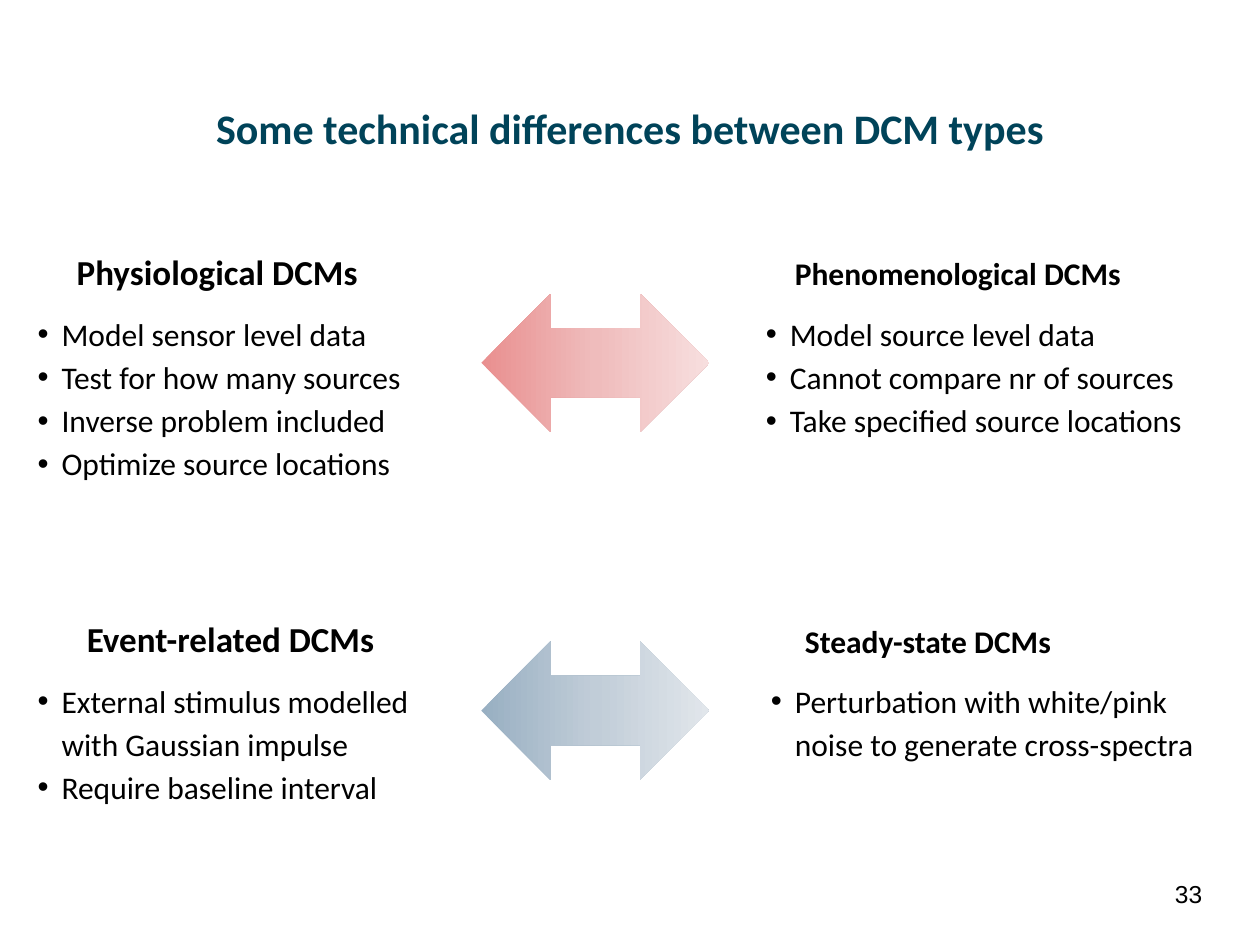
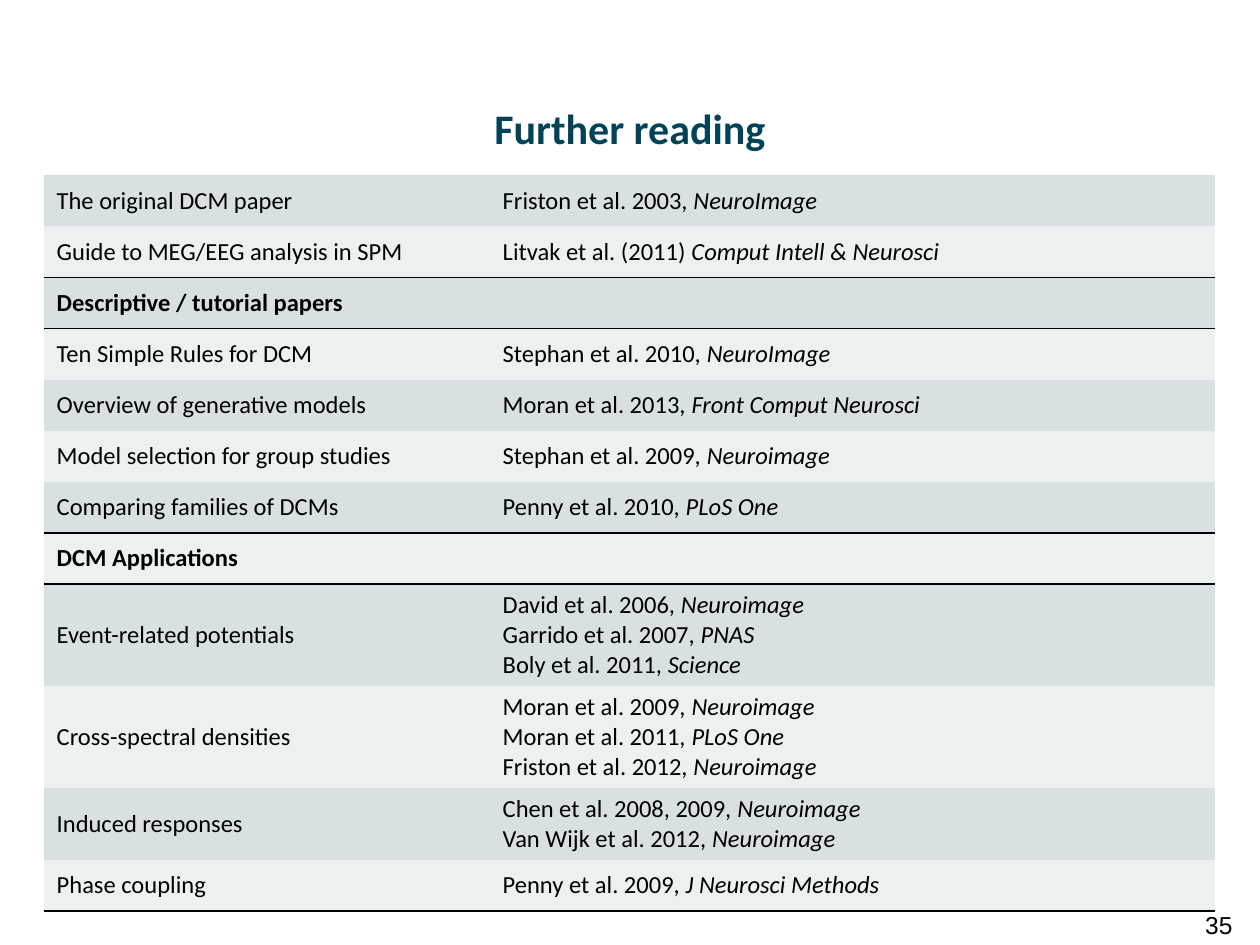
from copy import deepcopy
from dataclasses import dataclass
from typing import Any

from lxml.etree import SubElement
from pptx import Presentation
from pptx.dml.color import RGBColor
from pptx.enum.shapes import MSO_SHAPE as Preset
from pptx.enum.text import MSO_ANCHOR as Anchor, MSO_AUTO_SIZE as AutoSize, PP_ALIGN as Align
from pptx.oxml import parse_xml
from pptx.oxml.ns import nsdecls, qn
from pptx.util import Inches, Pt

BLACK = "000000"
TITLE_COLOUR = "004359"
BANDS = ("D8E0E3", "ECF0F1")
PLAIN_TABLE_STYLE = "{2D5ABB26-0587-4C30-8999-92F81FD0307C}"
BULLET_INDENT = Inches(0.19)
TABLE_HEIGHT = 5.84
TITLE_FORMAT = {"name": "Calibri", "size": Pt(24), "bold": True}
BODY_FORMAT = {"name": "Calibri", "size": Pt(18)}
ENTRY_FORMAT = {"name": "Calibri", "size": Pt(14), "bold": False}
NUMBER_FORMAT = {"name": "Arial", "size": Pt(14)}


@dataclass(frozen=True)
class Box:
    """A place on the slide, in inches."""
    left: float
    top: float
    width: float
    height: float

    def emu(self) -> tuple:
        """Return the four lengths for python-pptx."""
        return tuple(Inches(v) for v in (self.left, self.top, self.width, self.height))


@dataclass(frozen=True)
class DcmType:
    """One kind of DCM with its heading and properties."""
    heading: str
    heading_box: Box
    heading_size: int
    points: tuple[str, ...]
    points_box: Box


@dataclass(frozen=True)
class Contrast:
    """An arrow between two kinds of DCM."""
    arrow_box: Box
    gradient: tuple[str, str, str]
    sides: tuple[DcmType, DcmType]


@dataclass(frozen=True)
class Reading:
    """A table row: a topic with references, or a section heading without."""
    topic: str
    references: tuple[tuple[str, str], ...] = ()


CONTRASTS = (
    Contrast(Box(3.82, 2.33, 1.81, 1.1), ("E98F8F", "EFBCBC", "F7DEDE"), (
        DcmType("Physiological DCMs", Box(0.51, 1.94, 2.52, 0.44), 20,
                ("Model sensor level data", "Test for how many sources",
                 "Inverse problem included", "Optimize source locations"),
                Box(0.2, 2.41, 3.62, 1.78)),
        DcmType("Phenomenological DCMs", Box(6.21, 1.97, 2.81, 0.4), 18,
                ("Model source level data", "Cannot compare nr of sources",
                 "Take specified source locations"),
                Box(5.98, 2.41, 3.98, 1.48)))),
    Contrast(Box(3.82, 5.09, 1.81, 1.1), ("98AFC2", "C1CDD8", "E1E6EB"), (
        DcmType("Event-related DCMs", Box(0.59, 4.85, 2.52, 0.44), 20,
                ("External stimulus modelled with Gaussian impulse",
                 "Require baseline interval"),
                Box(0.2, 5.32, 3.62, 1.44)),
        DcmType("Steady-state DCMs", Box(6.29, 4.89, 2.18, 0.4), 18,
                ("Perturbation with white/pink noise to generate cross-spectra",),
                Box(6.02, 5.32, 3.78, 0.79)))),
)

READINGS = (
    Reading("The original DCM paper", (("Friston et al. 2003, ", "NeuroImage"),)),
    Reading("Guide to MEG/EEG analysis in SPM",
            (("Litvak et al. (2011) ", "Comput Intell & Neurosci"),)),
    Reading("Descriptive / tutorial papers"),
    Reading("Ten Simple Rules for DCM", (("Stephan et al. 2010, ", "NeuroImage"),)),
    Reading("Overview of generative models",
            (("Moran et al. 2013, ", "Front Comput Neurosci"),)),
    Reading("Model selection for group studies", (("Stephan et al. 2009, ", "Neuroimage"),)),
    Reading("Comparing families of DCMs", (("Penny et al. 2010, ", "PLoS One"),)),
    Reading("DCM Applications"),
    Reading("Event-related potentials",
            (("David et al. 2006, ", "Neuroimage"), ("Garrido et al. 2007, ", "PNAS"),
             ("Boly et al. 2011, ", "Science"))),
    Reading("Cross-spectral densities",
            (("Moran et al. 2009, ", "Neuroimage"), ("Moran et al. 2011, ", "PLoS One"),
             ("Friston et al. 2012, ", "Neuroimage"))),
    Reading("Induced responses",
            (("Chen et al. 2008, 2009, ", "Neuroimage"),
             ("Van Wijk et al. 2012, ", "Neuroimage"))),
    Reading("Phase coupling", (("Penny et al. 2009, ", "J Neurosci Methods"),)),
)


def paint(colour_format: Any, colour: str) -> None:
    """Set a colour from a hex string."""
    colour_format.rgb = RGBColor.from_string(colour)


def apply(target: Any, values: dict) -> None:
    """Set each named attribute of the target."""
    for name, value in values.items():
        setattr(target, name, value)


def add_run(paragraph: Any, words: str, values: dict, colour: str = BLACK) -> None:
    """Append formatted words to a paragraph."""
    run = paragraph.add_run()
    run.text = words
    apply(run.font, values)
    paint(run.font.color, colour)


def next_paragraph(frame: Any, index: int) -> Any:
    """Return the first paragraph, or a new one after it."""
    return frame.add_paragraph() if index else frame.paragraphs[0]


def add_frame(slide: Any, box: Box) -> Any:
    """Add a wrapping text box and return its frame."""
    frame = slide.shapes.add_textbox(*box.emu()).text_frame
    frame.word_wrap = True
    return frame


def add_titled_slide(deck: Any, heading: str, number: str, number_box: Box) -> Any:
    """Add a title-only slide with its title and page number."""
    slide = deck.slides.add_slide(deck.slide_layouts[5])
    title = slide.shapes.title
    apply(title, dict(zip(("left", "top", "width", "height"),
                          Box(0.36, 0.76, 9.28, 1.42).emu())))
    apply(title.text_frame, {"vertical_anchor": Anchor.TOP, "auto_size": AutoSize.NONE})
    paragraph = title.text_frame.paragraphs[0]
    paragraph.alignment = Align.CENTER
    add_run(paragraph, heading, TITLE_FORMAT, TITLE_COLOUR)
    page = add_frame(slide, number_box).paragraphs[0]
    page.alignment = Align.RIGHT
    add_run(page, number, NUMBER_FORMAT)
    return slide


def add_dcm_type(slide: Any, dcm: DcmType) -> None:
    """Draw a heading and its bulleted properties."""
    heading = add_frame(slide, dcm.heading_box).paragraphs[0]
    add_run(heading, dcm.heading, BODY_FORMAT | {"size": Pt(dcm.heading_size), "bold": True})
    frame = add_frame(slide, dcm.points_box)
    for index, point in enumerate(dcm.points):
        paragraph = next_paragraph(frame, index)
        properties = paragraph._p.get_or_add_pPr()
        properties.set("marL", str(BULLET_INDENT))
        properties.set("indent", str(-BULLET_INDENT))
        SubElement(properties, qn("a:buFont"), typeface="Arial")
        SubElement(properties, qn("a:buChar"), char="•")
        paragraph.line_spacing = 1.14
        add_run(paragraph, point, BODY_FORMAT)


def add_arrow(slide: Any, contrast: Contrast) -> None:
    """Draw a two-headed arrow with a three-stop gradient."""
    arrow = slide.shapes.add_shape(Preset.LEFT_RIGHT_ARROW, *contrast.arrow_box.emu())
    arrow.shadow.inherit = False
    arrow.line.fill.background()
    arrow.fill.gradient()
    arrow.fill.gradient_angle = 0
    stops = arrow._element.spPr.find(qn("a:gradFill")).find(qn("a:gsLst"))
    stops.append(deepcopy(stops[0]))
    for stop, colour, position in zip(arrow.fill.gradient_stops, contrast.gradient, (0, 0.5, 1)):
        stop.position = position
        paint(stop.color, colour)


def add_border(cell: Any, side: str) -> None:
    """Give one side of a cell a thin black line."""
    cell._tc.get_or_add_tcPr().insert(0, parse_xml(
        f'<a:{side} {nsdecls("a")} w="12700"><a:solidFill>'
        f'<a:srgbClr val="{BLACK}"/></a:solidFill></a:{side}>'))


def row_heights(readings: tuple[Reading, ...]) -> list[float]:
    """Fit rows with several references, then share the rest equally."""
    tall = {i: 0.24 * len(r.references) + 0.09
            for i, r in enumerate(readings) if len(r.references) > 1}
    single = (TABLE_HEIGHT - sum(tall.values())) / (len(readings) - len(tall))
    return [tall.get(i, single) for i in range(len(readings))]


def add_reading_table(slide: Any, readings: tuple[Reading, ...]) -> None:
    """Draw the reading list as a banded table with ruled sections."""
    table = slide.shapes.add_table(
        len(readings), 2, *Box(0.35, 1.39, 9.29, TABLE_HEIGHT).emu()).table
    apply(table, {"first_row": False, "horz_banding": False})
    table._tbl.tblPr.find(qn("a:tableStyleId")).text = PLAIN_TABLE_STYLE
    for column, width in zip(table.columns, (3.54, 5.75)):
        column.width = Inches(width)
    for index, (reading, height) in enumerate(zip(readings, row_heights(readings))):
        table.rows[index].height = Inches(height)
        topic, sources = table.cell(index, 0), table.cell(index, 1)
        is_section = not reading.references
        ends_section = index + 1 == len(readings) or not readings[index + 1].references
        for cell in (topic, sources):
            cell.vertical_anchor = Anchor.MIDDLE
            cell.fill.solid()
            paint(cell.fill.fore_color, BANDS[index % 2])
            if ends_section:
                add_border(cell, "lnB")
            if is_section:
                add_border(cell, "lnT")
        add_run(topic.text_frame.paragraphs[0], reading.topic,
                ENTRY_FORMAT | {"bold": is_section})
        if is_section:
            topic.merge(sources)
        for line, (authors, journal) in enumerate(reading.references):
            paragraph = next_paragraph(sources.text_frame, line)
            add_run(paragraph, authors, ENTRY_FORMAT)
            add_run(paragraph, journal, ENTRY_FORMAT | {"italic": True})


def main() -> None:
    """Build both slides and save the deck."""
    deck = Presentation()
    apply(deck, {"slide_width": Inches(10), "slide_height": Inches(7.5)})
    differences = add_titled_slide(deck, "Some technical differences between DCM types",
                                   "33", Box(8.54, 6.93, 1.1, 0.52))
    for contrast in CONTRASTS:
        add_arrow(differences, contrast)
        for dcm in contrast.sides:
            add_dcm_type(differences, dcm)
    further = add_titled_slide(deck, "Further reading", "35", Box(8.78, 7.17, 1.1, 0.52))
    add_reading_table(further, READINGS)
    deck.save("out.pptx")


if __name__ == "__main__":
    main()
